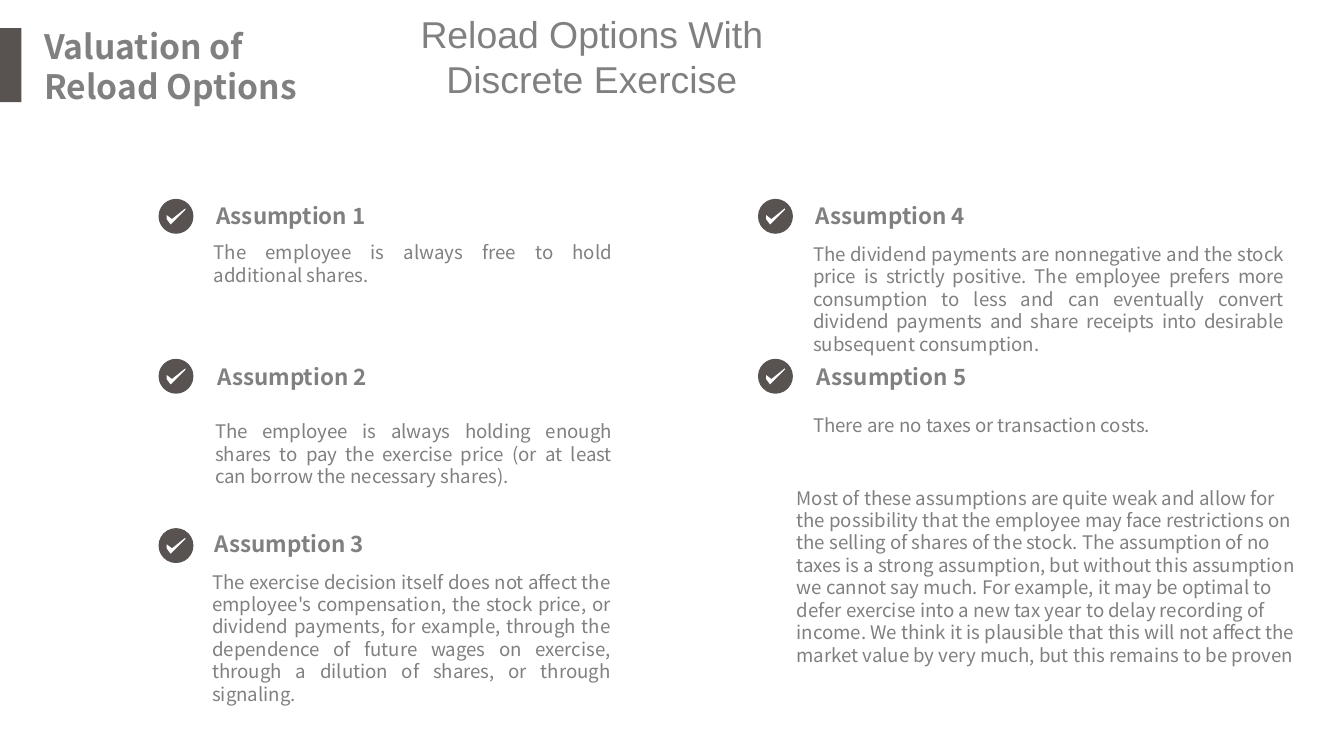
from typing import NamedTuple

from pptx import Presentation
from pptx.dml.color import RGBColor
from pptx.enum.shapes import MSO_SHAPE
from pptx.enum.text import MSO_ANCHOR, MSO_AUTO_SIZE, PP_ALIGN
from pptx.util import Inches, Pt

DARK = RGBColor(0x58, 0x52, 0x51)
GRAY = RGBColor(0x80, 0x80, 0x80)
WHITE = RGBColor(0xFF, 0xFF, 0xFF)
SANS = "Noto Sans CJK SC"
RECT, OVAL = MSO_SHAPE.RECTANGLE, MSO_SHAPE.OVAL
TOP, MIDDLE = MSO_ANCHOR.TOP, MSO_ANCHOR.MIDDLE
LEFT, CENTER, JUSTIFY = PP_ALIGN.LEFT, PP_ALIGN.CENTER, PP_ALIGN.JUSTIFY


class Box(NamedTuple):
    left: float
    top: float
    width: float
    height: float


class Style(NamedTuple):
    size: int
    bold: bool = False
    font: str = SANS
    align: int = LEFT
    anchor: int = MIDDLE
    inset: tuple = (0.1, 0.05, 0.1, 0.05)


class Point(NamedTuple):
    badge: tuple
    head: str
    head_box: Box
    text: str
    text_box: Box
    align: int = JUSTIFY


SIDE = 0.26
TICK = [(0.06, 0.15), (0.09, 0.19), (0.2, 0.08), (0.2, 0.07), (0.1, 0.15), (0.06, 0.12)]
COLS = (1.18, 5.64)
ROWS = (1.48, 2.67, 3.93)
HEAD = Style(12, bold=True)

POINTS = [
    Point((COLS[0], ROWS[0]), "Assumption 1", Box(1.51, 1.49, 1.55, 0.22),
          "The employee is always free to hold additional shares.",
          Box(1.59, 1.71, 3.06, 0.5)),
    Point((COLS[1], ROWS[0]), "Assumption 4", Box(5.97, 1.49, 1.47, 0.22),
          "The dividend payments are nonnegative and the stock price is strictly "
          "positive. The employee prefers more consumption to less and can eventually "
          "convert dividend payments and share receipts into desirable subsequent "
          "consumption.",
          Box(6.05, 1.71, 3.6, 1.03)),
    Point((COLS[0], ROWS[1]), "Assumption 2", Box(1.52, 2.66, 1.53, 0.28),
          "The employee is always holding enough shares to pay the exercise price "
          "(or at least can borrow the necessary shares).",
          Box(1.6, 2.9, 3.05, 0.95)),
    Point((COLS[1], ROWS[1]), "Assumption 5", Box(5.98, 2.65, 1.47, 0.31),
          "There are no taxes or transaction costs.",
          Box(6.05, 2.91, 3.55, 0.5), LEFT),
    Point((COLS[0], ROWS[2]), "Assumption 3", Box(1.5, 3.94, 1.4, 0.21),
          "The exercise decision itself does not affect the employee's compensation, "
          "the stock price, or dividend payments, for example, through the dependence "
          "of future wages on exercise, through a dilution of shares, or through "
          "signaling.",
          Box(1.58, 4.17, 3.06, 1.15)),
]

NOTE = (
    "Most of these assumptions are quite weak and allow for the possibility that the "
    "employee may face restrictions on the selling of shares of the stock. The "
    "assumption of no taxes is a strong assumption, but without this assumption we "
    "cannot say much. For example, it may be optimal to defer exercise into a new tax "
    "year to delay recording of income. We think it is plausible that this will not "
    "affect the market value by very much, but this remains to be proven"
)


def paint(shape, color: RGBColor) -> None:
    shape.shadow.inherit = False
    shape.fill.solid()
    shape.fill.fore_color.rgb = color
    shape.line.fill.background()


def write(shape, text: str, style: Style) -> None:
    frame = shape.text_frame
    frame.text = text
    frame.word_wrap = True
    frame.auto_size = MSO_AUTO_SIZE.NONE
    frame.vertical_anchor = style.anchor
    (frame.margin_left, frame.margin_top,
     frame.margin_right, frame.margin_bottom) = map(Inches, style.inset)
    para = frame.paragraphs[0]
    para.alignment = style.align
    para.font.name = style.font
    para.font.size = Pt(style.size)
    para.font.bold = style.bold
    para.font.color.rgb = GRAY


def add_text(slide, box: Box, text: str, style: Style) -> None:
    write(slide.shapes.add_textbox(*map(Inches, box)), text, style)


def add_badge(slide, left: float, top: float) -> None:
    disc = slide.shapes.add_shape(OVAL, *map(Inches, (left, top, SIDE, SIDE)))
    paint(disc, DARK)
    dots = [(Inches(left + x), Inches(top + y)) for x, y in TICK]
    pen = slide.shapes.build_freeform(*dots[0])
    pen.add_line_segments(dots[1:], close=True)
    paint(pen.convert_to_shape(), WHITE)


def add_point(slide, point: Point) -> None:
    add_badge(slide, *point.badge)
    add_text(slide, point.head_box, point.head, HEAD)
    body = Style(10, align=point.align, inset=(0, 0.05, 0.1, 0.05))
    add_text(slide, point.text_box, point.text, body)


def main() -> None:
    # Widescreen, 16 to 9
    deck = Presentation()
    deck.slide_width = Inches(10)
    deck.slide_height = Inches(10 * 9 / 16)
    slide = deck.slides.add_slide(deck.slide_layouts[5])

    # Title with its side bar
    bar = slide.shapes.add_shape(RECT, *map(Inches, (0, 0.21, 0.16, 0.55)))
    paint(bar, DARK)
    title = slide.shapes.title
    title.left, title.top, title.width, title.height = map(Inches, (0.23, 0.14, 2.44, 0.71))
    write(title, "Valuation of Reload Options", Style(18, bold=True, anchor=TOP))

    # Subtitle
    add_text(slide, Box(2.97, 0.08, 2.87, 0.67), "Reload Options With Discrete Exercise",
             Style(20, font="Arial", align=CENTER, inset=(0, 0, 0, 0)))

    # Assumptions
    for point in POINTS:
        add_point(slide, point)

    # Closing note
    add_text(slide, Box(5.83, 3.57, 3.93, 1.62), NOTE, Style(10, anchor=TOP))

    deck.save("out.pptx")


if __name__ == "__main__":
    main()
